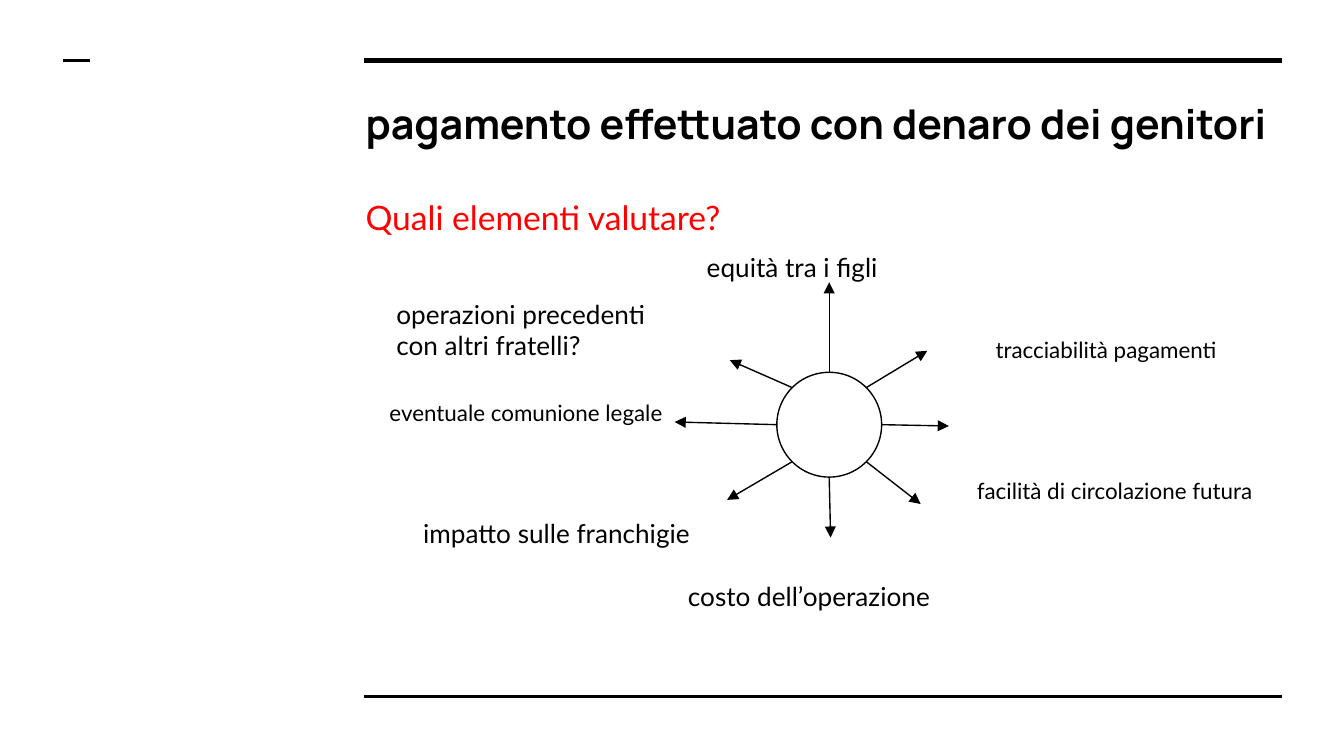
from math import cos, radians, sin

from pptx import Presentation
from pptx.dml.color import RGBColor
from pptx.enum.shapes import MSO_CONNECTOR as CONN, MSO_SHAPE as SHAPE
from pptx.enum.text import MSO_ANCHOR as ANCHOR, MSO_AUTO_SIZE as AUTO, PP_ALIGN as ALIGN
from pptx.oxml.ns import qn
from pptx.util import Inches, Pt
from lxml.etree import SubElement

BLACK, RED = "000000", "FF0000"
HUB_X, HUB_Y, HUB_R = 6.17, 3.16, 0.39

# x start, x end, y, weight
RULES = [
    (2.71, 9.54, 0.45, 3),
    (2.71, 9.54, 5.18, 1.5),
    (0.47, 0.67, 0.45, 1.5),
]

# angle on the hub (clockwise from the right), arrow tip
RAYS = [
    (0, 7.06, 3.17),
    (45, 6.85, 3.75),
    (90, 6.18, 4.0),
    (135, 5.41, 3.72),
    (180, 5.02, 3.14),
    (225, 5.43, 2.68),
    (270, 6.17, 2.1),
    (315, 6.9, 2.61),
]

# text, size, box
LABELS = [
    ("equità tra i figli", 14, (5.16, 1.77, 1.91, 0.57)),
    ("tracciabilità pagamenti", 12, (7.31, 2.4, 1.97, 0.4)),
    ("facilità di circolazione futura", 12, (7.17, 3.45, 2.37, 0.4)),
    ("eventuale comunione legale", 12, (2.8, 2.87, 2.37, 0.4)),
    ("costo dell’operazione", 14, (5.02, 4.22, 2.29, 0.44)),
    ("impatto sulle franchigie", 14, (3.05, 3.75, 2.56, 0.44)),
    ("operazioni precedenti con altri fratelli?", 14, (2.85, 2.12, 2.29, 0.67)),
]


def rgb(value):
    return RGBColor.from_string(value)


def write(sp, text, size, font="Lato", color=BLACK, bold=False):
    """Put one left-aligned run in the shape and return its paragraph."""
    tf = sp.text_frame
    tf.word_wrap = True
    tf.auto_size = AUTO.NONE
    tf.vertical_anchor = ANCHOR.TOP
    tf.margin_left = tf.margin_right = tf.margin_top = tf.margin_bottom = Inches(0.1)
    p = tf.paragraphs[0]
    p.alignment = ALIGN.LEFT
    p.space_before = Pt(0)
    r = p.add_run()
    r.text = text
    r.font.name, r.font.size, r.font.bold = font, Pt(size), bold
    r.font.color.rgb = rgb(color)
    return p


def place(sp, box):
    sp.left, sp.top, sp.width, sp.height = map(Inches, box)


def add_line(s, x1, y1, x2, y2, weight, arrow=False):
    c = s.shapes.add_connector(CONN.STRAIGHT, *map(Inches, (x1, y1, x2, y2)))
    c.line.width = Pt(weight)
    c.line.color.rgb = rgb(BLACK)
    spPr = c._element.spPr
    if arrow:
        SubElement(spPr.find(qn("a:ln")), qn("a:tailEnd"), type="triangle")
    SubElement(spPr, qn("a:effectLst"))


def add_headings(s):
    title, body = s.placeholders
    place(title, (2.62, 0.63, 6.91, 0.69))
    write(title, "pagamento effettuato con denaro dei genitori", 22, "Manrope", bold=True)
    place(body, (2.62, 1.32, 6.91, 3.47))
    p = write(body, "Quali elementi valutare?", 18, color=RED)
    p.line_spacing = 1.15
    p.space_after = Pt(12)
    pPr = p._p.get_or_add_pPr()
    pPr.set("marL", "0")
    pPr.set("indent", "0")
    SubElement(pPr, qn("a:buNone"))


def add_hub(s):
    sp = s.shapes.add_shape(SHAPE.OVAL, Inches(HUB_X - HUB_R), Inches(HUB_Y - HUB_R),
                            Inches(2 * HUB_R), Inches(2 * HUB_R))
    sp.shadow.inherit = False
    sp.fill.background()
    sp.line.width = Pt(0.75)
    sp.line.color.rgb = rgb(BLACK)


def add_ray(s, angle, tip_x, tip_y):
    a = radians(angle)
    add_line(s, HUB_X + HUB_R * cos(a), HUB_Y + HUB_R * sin(a), tip_x, tip_y, 0.75, arrow=True)


def add_label(s, text, size, box):
    write(s.shapes.add_textbox(*map(Inches, box)), text, size)


def main():
    prs = Presentation()
    prs.slide_width = Inches(10)
    prs.slide_height = prs.slide_width * 9 // 16
    s = prs.slides.add_slide(prs.slide_layouts[1])
    for x1, x2, y, weight in RULES:
        add_line(s, x1, y, x2, y, weight)
    add_headings(s)
    add_hub(s)
    for ray in RAYS:
        add_ray(s, *ray)
    for label in LABELS:
        add_label(s, *label)
    prs.save("out.pptx")


if __name__ == "__main__":
    main()
